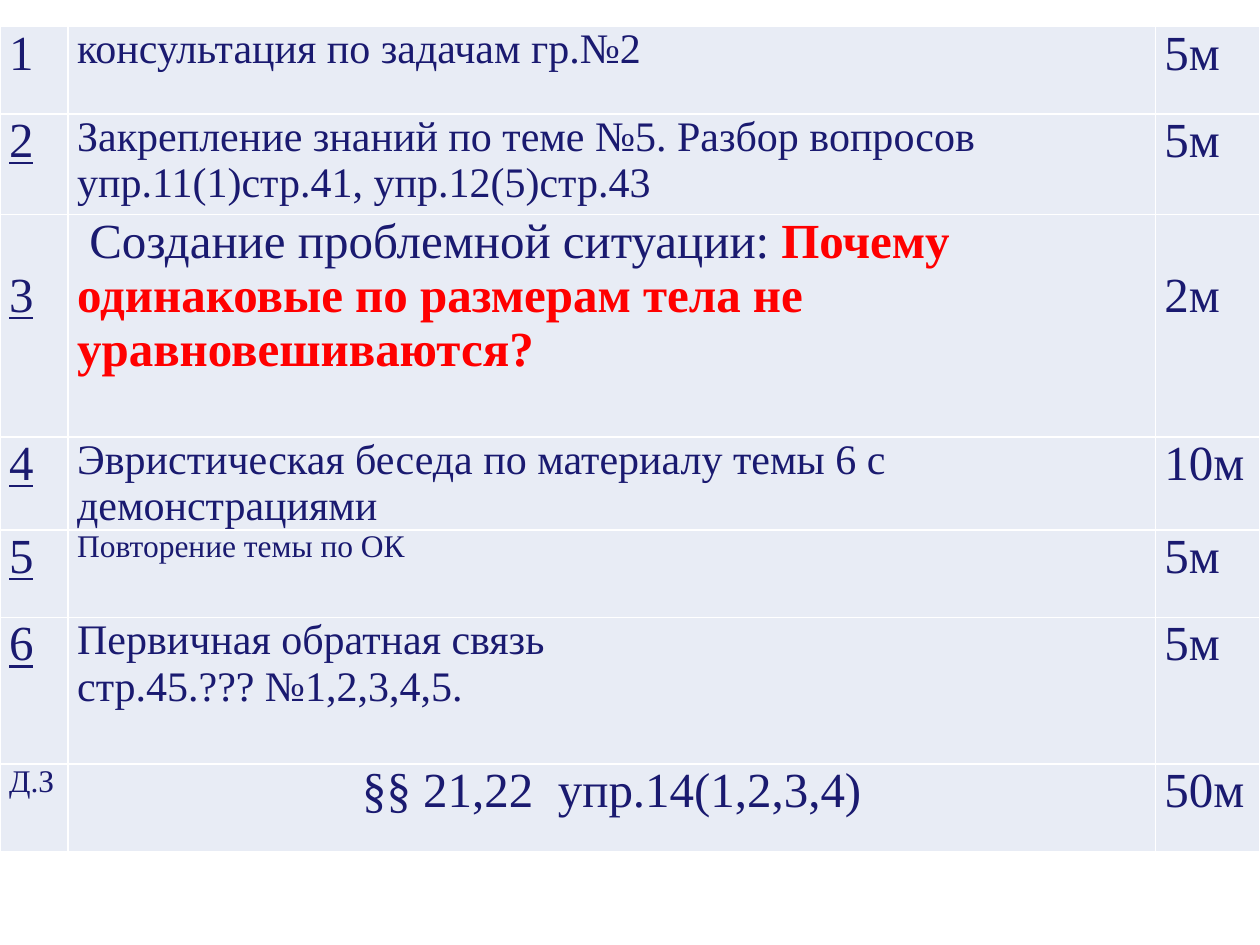
from lxml import etree
from pptx import Presentation
from pptx.dml.color import RGBColor
from pptx.enum import text
from pptx.oxml import ns
from pptx.util import Pt

NAVY, RED, PALE, WHITE = "1A1A70", "FF0000", "E8ECF5", "FFFFFF"


def rgb(value):
    return RGBColor.from_string(value)


def add_borders(cell):
    """Give all four sides of the cell a thin white line."""
    tc_pr = cell._tc.get_or_add_tcPr()
    for i, side in enumerate(("lnL", "lnR", "lnT", "lnB")):
        ln = etree.Element(ns.qn(f"a:{side}"), w=str(Pt(1)))
        fill = etree.SubElement(ln, ns.qn("a:solidFill"))
        etree.SubElement(fill, ns.qn("a:srgbClr"), val=WHITE)
        tc_pr.insert(i, ln)


# number, its size, lesson stage, its size, duration, row height
STAGES = [
    ("1", 28, "консультация по задачам гр.№2", 24, "5м", 50),
    ("2", 28, "Закрепление знаний по теме №5. Разбор вопросов "
     "упр.11(1)стр.41, упр.12(5)стр.43", 24, "5м", 57.5),
    ("3", 28, " Создание проблемной ситуации: ", 28, "2м", 127),
    ("4", 28, "Эвристическая беседа по материалу темы 6 с демонстрациями",
     24, "10м", 53),
    ("5", 28, "Повторение темы по ОК", 18, "5м", 50),
    ("6", 28, "Первичная обратная связь\nстр.45.??? №1,2,3,4,5.", 24, "5м", 84),
    ("Д.З", 18, "§§ 21,22  упр.14(1,2,3,4)", 28, "50м", 50),
]
QUESTION = "Почему одинаковые по размерам тела не уравновешиваются?"
PROBLEM_ROW = 2
COLUMN_WIDTHS = (38.9, 621.3, 59.8)

prs = Presentation()
prs.slide_width, prs.slide_height = Pt(720), Pt(540)
s = prs.slides.add_slide(prs.slide_layouts[6])

height = sum(stage[-1] for stage in STAGES)
table = s.shapes.add_table(len(STAGES), 3, 0, Pt(15.2), Pt(720), Pt(height)).table
table.first_row = table.horz_banding = False
for column, width in zip(table.columns, COLUMN_WIDTHS):
    column.width = Pt(width)

for row, (number, number_size, stage, stage_size, time, row_height) in enumerate(STAGES):
    table.rows[row].height = Pt(row_height)
    entries = [(number, number_size), (stage, stage_size), (time, 28)]
    for col, (words, size) in enumerate(entries):
        cell = table.cell(row, col)
        cell.margin_left = cell.margin_right = Pt(5.2)
        cell.margin_top = cell.margin_bottom = 0
        if row == PROBLEM_ROW and col != 1:
            cell.margin_top = Pt(31)
        cell.fill.solid()
        cell.fill.fore_color.rgb = rgb(PALE)
        add_borders(cell)
        tf = cell.text_frame
        tf.text = words
        if row == PROBLEM_ROW and col == 1:
            tf.paragraphs[0].add_run().text = QUESTION
        for p in tf.paragraphs:
            for r in p.runs:
                r.font.name = "Times New Roman"
                r.font.size = Pt(size)
                r.font.bold = r.text == QUESTION
                r.font.color.rgb = rgb(RED if r.text == QUESTION else NAVY)
                r.font.underline = col == 0 and words in "23456"

table.cell(len(STAGES) - 1, 1).text_frame.paragraphs[0].alignment = text.PP_ALIGN.CENTER

prs.save("out.pptx")
